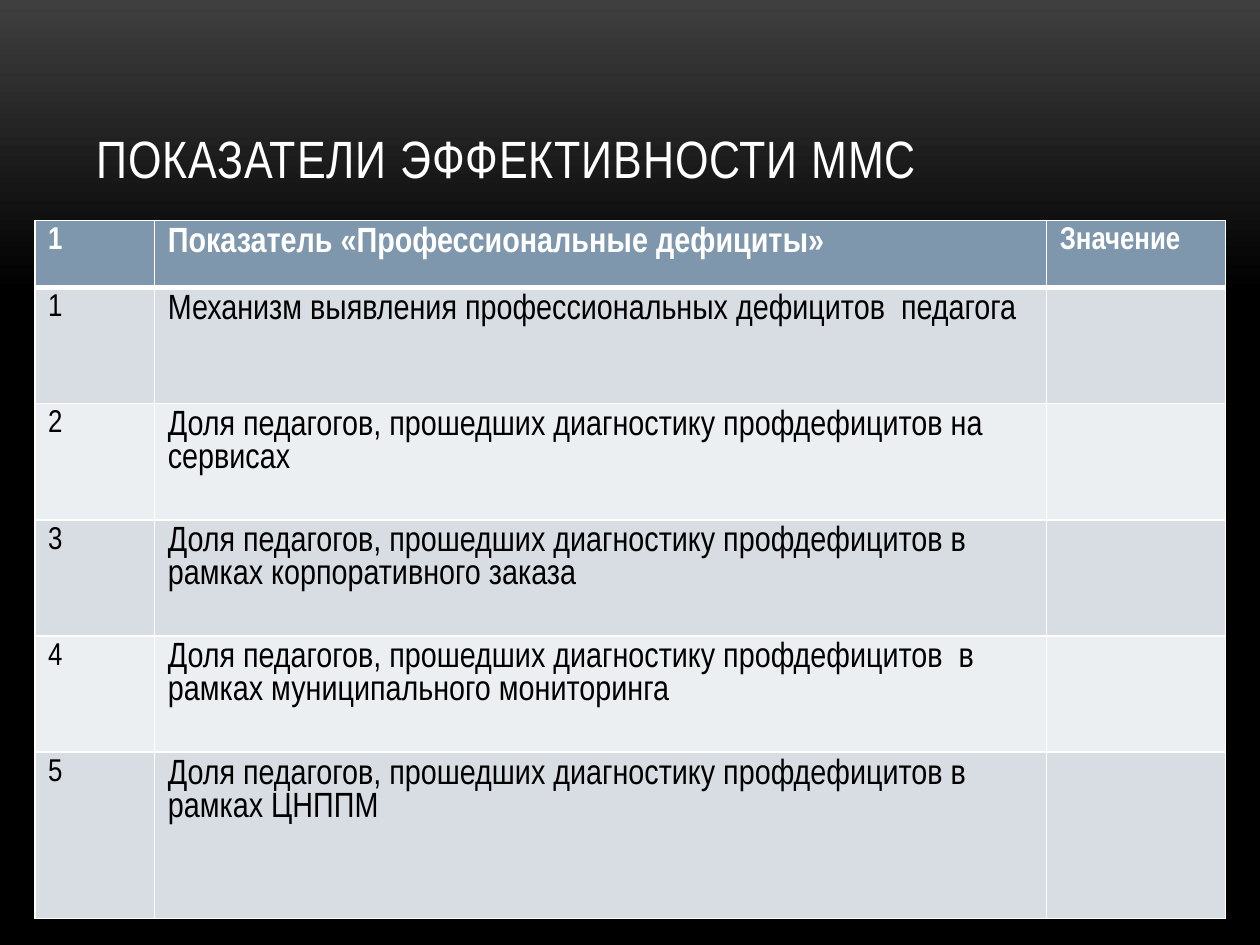
"""Build a slide with a table of performance indicators."""
import copy
from dataclasses import dataclass

import lxml.etree
import pptx
import pptx.dml.color
import pptx.enum.text
import pptx.oxml.ns
import pptx.util

Pt = pptx.util.Pt
FONT = "Arial Narrow"
COLORS = {
    "white": "FFFFFF",
    "black": "000000",
    "charcoal": "3F3F3F",
    "header": "7E97AD",
    "odd": "D8DDE3",
    "even": "ECEFF1",
}
COLUMN_WIDTHS = (68.4, 509.7, 102.3)
COLUMN_SIZES = (18, 20, 18)


@dataclass
class IndicatorRow:
    """Texts and height of one table row."""

    number: str
    indicator: str
    value: str = ""
    height: float = 66.4


ROWS = [
    IndicatorRow("1", "Показатель «Профессиональные дефициты»", "Значение", 38.3),
    IndicatorRow("1", "Механизм выявления профессиональных дефицитов  педагога"),
    IndicatorRow("2", "Доля педагогов, прошедших диагностику профдефицитов на сервисах"),
    IndicatorRow("3", "Доля педагогов, прошедших диагностику профдефицитов в рамках корпоративного заказа"),
    IndicatorRow("4", "Доля педагогов, прошедших диагностику профдефицитов  в рамках муниципального мониторинга"),
    IndicatorRow("5", "Доля педагогов, прошедших диагностику профдефицитов в рамках ЦНППМ", height=95),
]


def rgb(name: str) -> pptx.dml.color.RGBColor:
    """Look up a named colour."""
    return pptx.dml.color.RGBColor.from_string(COLORS[name])


def format_font(font, size: float, color: str, bold: bool = False) -> None:
    """Set the typeface, size, colour and weight."""
    font.name = FONT
    font.size = Pt(size)
    font.bold = bold
    font.color.rgb = rgb(color)


def fill_background(slide) -> None:
    """Fade the background downwards from charcoal to black."""
    fill = slide.background.fill
    fill.gradient()
    fill.gradient_angle = 270
    first, last = fill.gradient_stops
    first.position, last.position = 0, 1
    first.color.rgb, last.color.rgb = rgb("charcoal"), rgb("black")
    stops = slide.background._cSld.find(".//" + pptx.oxml.ns.qn("a:gsLst"))
    middle = copy.deepcopy(stops[1])
    middle.set("pos", "31000")
    stops.insert(1, middle)


def add_title(slide, text: str) -> None:
    """Place and format the title placeholder."""
    title = slide.shapes.title
    title.left, title.top, title.width, title.height = Pt(48), Pt(21.6), Pt(624), Pt(90)
    frame = title.text_frame
    frame.text = text
    frame.vertical_anchor = pptx.enum.text.MSO_ANCHOR.BOTTOM
    frame.auto_size = pptx.enum.text.MSO_AUTO_SIZE.NONE
    paragraph = frame.paragraphs[0]
    paragraph.alignment = pptx.enum.text.PP_ALIGN.LEFT
    run = paragraph.runs[0]
    format_font(run.font, 30, "white")
    run.font._element.set("spc", "50")


def set_borders(cell, top: float, bottom: float) -> None:
    """Draw white borders ahead of the cell fill."""
    properties = cell._tc.get_or_add_tcPr()
    widths = {"a:lnL": 1, "a:lnR": 1, "a:lnT": top, "a:lnB": bottom}
    for index, (tag, width) in enumerate(widths.items()):
        line = lxml.etree.Element(pptx.oxml.ns.qn(tag), w=str(Pt(width)))
        fill = lxml.etree.SubElement(line, pptx.oxml.ns.qn("a:solidFill"))
        lxml.etree.SubElement(fill, pptx.oxml.ns.qn("a:srgbClr"), val=COLORS["white"])
        properties.insert(index, line)


def format_cell(cell, text: str, size: float, row_index: int) -> None:
    """Write one cell with its fill, borders and font."""
    header = row_index == 0
    cell.margin_left = cell.margin_right = Pt(7.6)
    cell.margin_top = cell.margin_bottom = Pt(3.6)
    cell.fill.solid()
    cell.fill.fore_color.rgb = rgb("header" if header else "odd" if row_index % 2 else "even")
    set_borders(cell, 3 if row_index == 1 else 1, 3 if header else 1)
    cell.text_frame.text = text
    for run in cell.text_frame.paragraphs[0].runs:
        format_font(run.font, size, "white" if header else "black", header)


def add_indicator_table(slide, rows: list[IndicatorRow]) -> None:
    """Add the table of indicators."""
    table = slide.shapes.add_table(
        len(rows), len(COLUMN_WIDTHS), Pt(19.9), Pt(126),
        Pt(sum(COLUMN_WIDTHS)), Pt(sum(row.height for row in rows)),
    ).table
    for column, width in zip(table.columns, COLUMN_WIDTHS):
        column.width = Pt(width)
    for row_index, row in enumerate(rows):
        table.rows[row_index].height = Pt(row.height)
        texts = (row.number, row.indicator, row.value)
        for column_index, (text, size) in enumerate(zip(texts, COLUMN_SIZES)):
            format_cell(table.cell(row_index, column_index), text, size, row_index)


def main() -> None:
    """Build and save the presentation."""
    presentation = pptx.Presentation()
    presentation.slide_width, presentation.slide_height = Pt(720), Pt(540)
    slide = presentation.slides.add_slide(presentation.slide_layouts[5])
    fill_background(slide)
    add_title(slide, "ПОКАЗАТЕЛИ ЭФФЕКТИВНОСТИ ММС")
    add_indicator_table(slide, ROWS)
    presentation.save("out.pptx")


if __name__ == "__main__":
    main()
